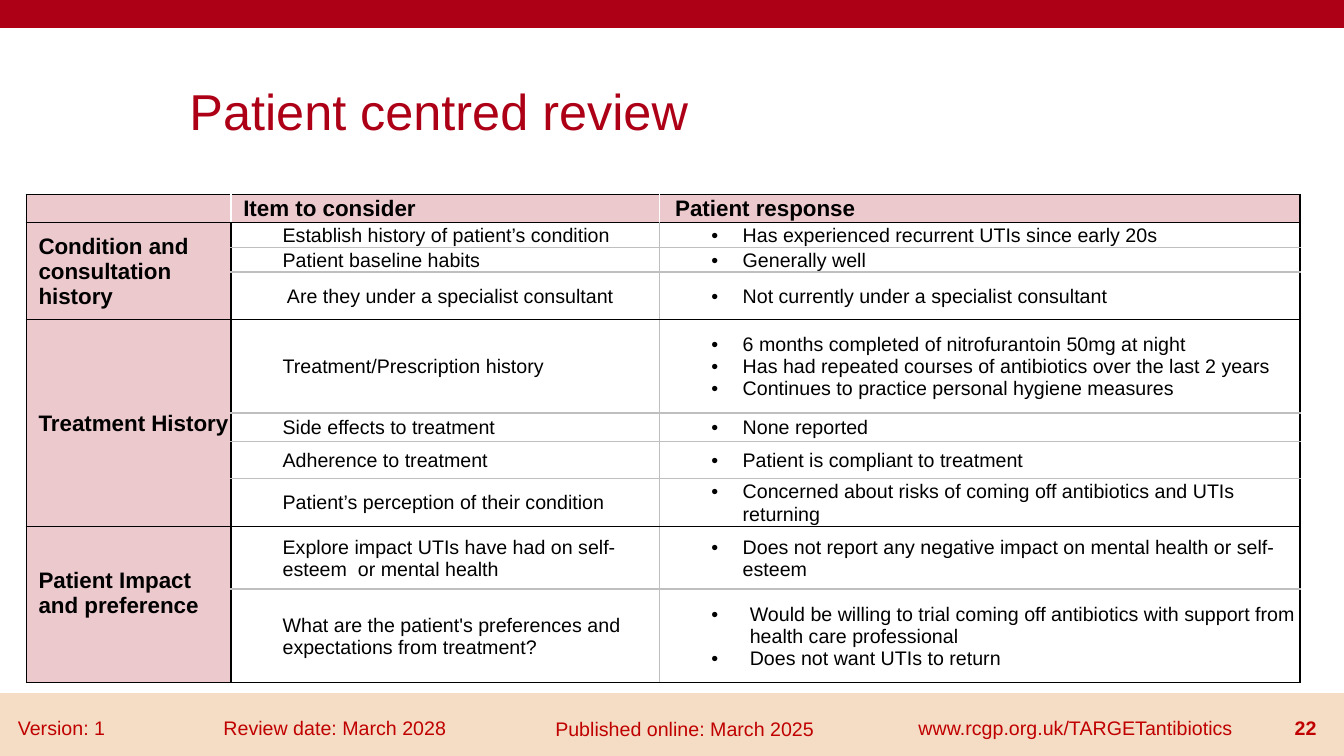
from lxml import etree
from pptx import Presentation
from pptx.dml.color import RGBColor
from pptx.enum.shapes import MSO_SHAPE
from pptx.enum.text import MSO_ANCHOR, MSO_AUTO_SIZE, PP_ALIGN
from pptx.oxml.ns import qn
from pptx.util import Cm, Pt

RECTANGLE = MSO_SHAPE.RECTANGLE
MIDDLE = MSO_ANCHOR.MIDDLE
NO_AUTOFIT = MSO_AUTO_SIZE.NONE
LEFT, RIGHT = PP_ALIGN.LEFT, PP_ALIGN.RIGHT

BLACK, WHITE, GREY = "000000", "FFFFFF", "BFBFBF"
CRIMSON, FOOTER_RED, SAND, PINK = "AD0016", "C00000", "F4DDC4", "ECC9CD"

COLUMN_WIDTHS = [5.16, 10.8, 16.13]
ROW_HEIGHTS = [0.69, 0.61, 0.61, 1.19, 2.36, 0.71, 0.94, 1.19, 1.57, 2.36]
LABEL_INDENT, ITEM_INDENT, BULLET_INDENT = 0.28, 1.27, 1.27

# Each group: label, space below the label, rows of (item, responses, response indent)
GROUPS = [
    ("Condition and consultation history", 0, [
        ("Establish history of patient’s condition",
         ["Has experienced recurrent UTIs since early 20s"], 2.06),
        ("Patient baseline habits", ["Generally well"], 2.06),
        (" Are they under a specialist consultant",
         ["Not currently under a specialist consultant"], 2.06),
    ]),
    ("Treatment History", 0, [
        ("Treatment/Prescription history",
         ["6 months completed of nitrofurantoin 50mg at night",
          "Has had repeated courses of antibiotics over the last 2 years",
          "Continues to practice personal hygiene measures"], 2.06),
        ("Side effects to treatment", ["None reported"], 2.06),
        ("Adherence to treatment", ["Patient is compliant to treatment"], 2.06),
        ("Patient’s perception of their condition",
         ["Concerned about risks of coming off antibiotics and UTIs returning"], 2.06),
    ]),
    ("Patient Impact and preference", 0.62, [
        ("Explore impact UTIs have had on self-esteem  or mental health",
         ["Does not report any negative impact on mental health or self-esteem"], 2.06),
        ("What are the patient's preferences and expectations from treatment?",
         ["Would be willing to trial coming off antibiotics with support from "
          "health care professional",
          "Does not want UTIs to return"], 2.24),
    ]),
]

# Left, top, width, text, alignment, bold
FOOTERS = [
    (0.2, 17.91, 2.95, "Version: 1", LEFT, False),
    (5.38, 17.91, 7.06, "Review date: March 2028", LEFT, False),
    (13.74, 17.94, 7.42, "Published online: March 2025", LEFT, False),
    (22.89, 17.91, 9.27, "www.rcgp.org.uk/TARGETantibiotics", LEFT, False),
    (31.95, 17.91, 1.47, "22", RIGHT, True),
]


def colour(value):
    return RGBColor.from_string(value)


def group_starts():
    """Table rows where a group begins, and the row after the last group."""
    starts = [1]
    for _, _, rows in GROUPS:
        starts.append(starts[-1] + len(rows))
    return starts


def horizontal_colour(line, column):
    """Colour of the rule above table row number `line`."""
    return BLACK if column == 0 or line in [0] + group_starts() else GREY


def vertical_colour(line, row):
    """Colour of the rule left of column number `line`."""
    if line in (0, len(COLUMN_WIDTHS)):
        return BLACK
    if row == 0:
        return WHITE
    return BLACK if line == 1 else GREY


class SlideBuilder:
    def __init__(self, slide, font="Arial"):
        self.slide = slide
        self.font = font

    def add_run(self, paragraph, text, size, hex_colour, bold=False):
        run = paragraph.add_run()
        run.text = text
        run.font.name = self.font
        run.font.size = Pt(size)
        run.font.bold = bold
        run.font.color.rgb = colour(hex_colour)

    def title(self, text, left, top, width, height):
        shape = self.slide.shapes.title
        shape.left, shape.top = Cm(left), Cm(top)
        shape.width, shape.height = Cm(width), Cm(height)
        frame = shape.text_frame
        frame.auto_size = NO_AUTOFIT
        frame.vertical_anchor = MIDDLE
        paragraph = frame.paragraphs[0]
        paragraph.alignment = LEFT
        paragraph.line_spacing = 0.9
        self.add_run(paragraph, text, 36, CRIMSON)

    def bar(self, top, height, fill):
        shape = self.slide.shapes.add_shape(
            RECTANGLE, 0, Cm(top), Cm(33.86), Cm(height))
        shape.shadow.inherit = False
        shape.fill.solid()
        shape.fill.fore_color.rgb = colour(fill)
        shape.line.color.rgb = colour(fill)
        shape.line.width = Pt(1)

    def footer(self, left, top, width, text, alignment, bold):
        box = self.slide.shapes.add_textbox(Cm(left), Cm(top), Cm(width), Cm(1.02))
        box.text_frame.word_wrap = True
        paragraph = box.text_frame.paragraphs[0]
        paragraph.alignment = alignment
        self.add_run(paragraph, text, 14, FOOTER_RED, bold)

    def table(self, left, top):
        frame = self.slide.shapes.add_table(
            len(ROW_HEIGHTS), len(COLUMN_WIDTHS), Cm(left), Cm(top),
            Cm(sum(COLUMN_WIDTHS)), Cm(sum(ROW_HEIGHTS)))
        table = frame.table
        table.first_row = table.horz_banding = False
        for column, width in zip(table.columns, COLUMN_WIDTHS):
            column.width = Cm(width)
        for row, height in zip(table.rows, ROW_HEIGHTS):
            row.height = Cm(height)
        for row in range(len(ROW_HEIGHTS)):
            for column in range(len(COLUMN_WIDTHS)):
                self.format_cell(table.cell(row, column), row, column)
        return table

    def format_cell(self, cell, row, column):
        cell.vertical_anchor = MIDDLE
        cell.margin_left = cell.margin_right = cell.margin_top = Cm(0.03)
        cell.margin_bottom = 0
        properties = cell._tc.get_or_add_tcPr()
        borders = [("a:lnL", vertical_colour(column, row)),
                   ("a:lnR", vertical_colour(column + 1, row)),
                   ("a:lnT", horizontal_colour(row, column)),
                   ("a:lnB", horizontal_colour(row + 1, column))]
        for tag, hex_colour in borders:
            line = etree.SubElement(properties, qn(tag), w=str(Pt(1)))
            fill = etree.SubElement(line, qn("a:solidFill"))
            etree.SubElement(fill, qn("a:srgbClr"), val=hex_colour)
        cell.fill.solid()
        cell.fill.fore_color.rgb = colour(PINK if row == 0 or column == 0 else WHITE)
        # Keeps empty cells from stretching the short rows
        first = cell.text_frame.paragraphs[0]
        etree.SubElement(first._p, qn("a:endParaRPr"), sz="1400")

    def cell_text(self, cell, lines, indent, size=14, bold=False, bullet_at=None):
        frame = cell.text_frame
        for index, text in enumerate(lines):
            paragraph = frame.add_paragraph() if index else frame.paragraphs[0]
            properties = paragraph._p.get_or_add_pPr()
            properties.set("marL", str(Cm(indent)))
            if bullet_at is not None:
                properties.set("indent", str(Cm(bullet_at) - Cm(indent)))
                etree.SubElement(properties, qn("a:buFont"), typeface=self.font)
                etree.SubElement(properties, qn("a:buChar"), char="•")
            self.add_run(paragraph, text, size, BLACK, bold)


def main():
    presentation = Presentation()
    presentation.slide_width, presentation.slide_height = Cm(33.86), Cm(19.05)
    slide = presentation.slides.add_slide(presentation.slide_layouts[5])
    builder = SlideBuilder(slide)

    builder.bar(17.48, 1.57, SAND)
    builder.bar(-0.03, 0.71, CRIMSON)
    for footer in FOOTERS:
        builder.footer(*footer)
    builder.title("Patient centred review", 4.52, 1.04, 26.97, 3.68)

    table = builder.table(0.66, 4.9)
    builder.cell_text(table.cell(0, 1), ["Item to consider"], LABEL_INDENT, 16, True)
    builder.cell_text(table.cell(0, 2), ["Patient response"], 0.36, 16, True)
    for start, (label, space_below, rows) in zip(group_starts(), GROUPS):
        label_cell = table.cell(start, 0)
        label_cell.merge(table.cell(start + len(rows) - 1, 0))
        label_cell.margin_bottom = Cm(space_below)
        builder.cell_text(label_cell, [label], LABEL_INDENT, 16, True)
        for row, (item, responses, indent) in enumerate(rows, start):
            builder.cell_text(table.cell(row, 1), [item], ITEM_INDENT)
            builder.cell_text(table.cell(row, 2), responses, indent,
                              bullet_at=BULLET_INDENT)

    presentation.save("out.pptx")


if __name__ == "__main__":
    main()
